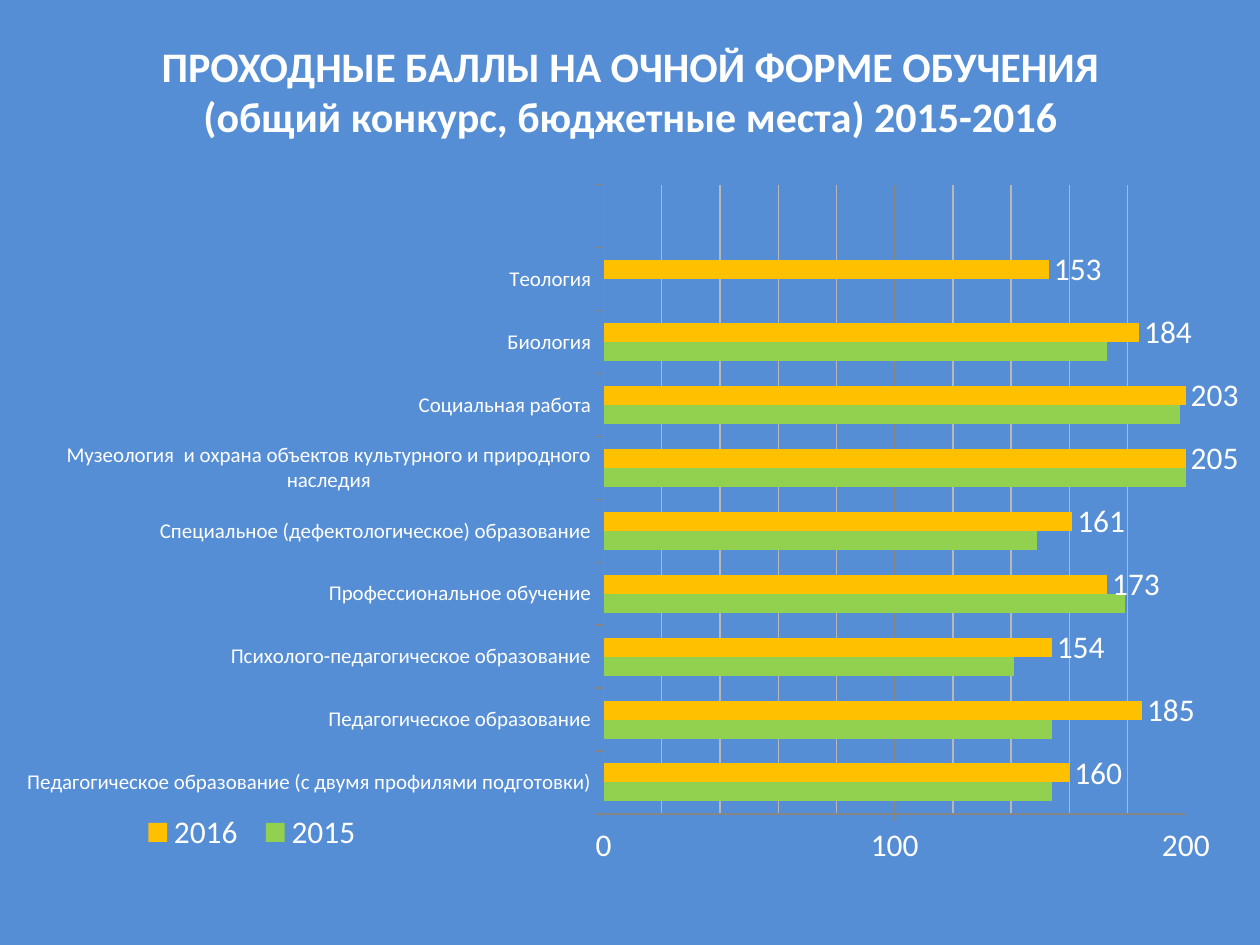
from copy import deepcopy
from dataclasses import dataclass

from lxml import etree
from pptx import Presentation
from pptx.chart.data import CategoryChartData
from pptx.dml.color import RGBColor
from pptx.enum import chart as charts, text
from pptx.oxml.ns import qn
from pptx.util import Cm, Pt


@dataclass(frozen=True)
class Theme:
    font: str = "Calibri"
    background: str = "558ED5"
    ink: str = "FFFFFF"
    axis: str = "868686"
    minor_grid: str = "B7B7B7"
    year_2015: str = "92D050"
    year_2016: str = "FFC000"
    title_size: int = 24
    chart_size: int = 18
    category_size: int = 12


TITLE = ["ПРОХОДНЫЕ БАЛЛЫ НА ОЧНОЙ ФОРМЕ ОБУЧЕНИЯ",
         "(общий конкурс, бюджетные места) 2015-2016"]

# Programme, score in 2015, score in 2016; the last slot is left free
SCORES = [
    ("Педагогическое образование (с двумя профилями подготовки)", 154, 160),
    ("Педагогическое образование", 154, 185),
    ("Психолого-педагогическое образование", 141, 154),
    ("Профессиональное обучение", 179, 173),
    ("Специальное (дефектологическое) образование", 149, 161),
    ("Музеология  и охрана объектов культурного и природного наследия", 200, 205),
    ("Социальная работа", 198, 203),
    ("Биология", 173, 184),
    ("Теология", None, 153),
    ("", None, None),
]


class SlideBuilder:
    def __init__(self, page, theme):
        self.page = page
        self.theme = theme
        fill = page.background.fill
        fill.solid()
        fill.fore_color.rgb = RGBColor.from_string(theme.background)

    def style_font(self, font, size, bold=False):
        font.name = self.theme.font
        font.size = Pt(size)
        font.bold = bold
        font.color.rgb = RGBColor.from_string(self.theme.ink)

    def style_line(self, line, color):
        line.color.rgb = RGBColor.from_string(color)
        line.width = Pt(0.75)

    def title(self, lines, left, top, width, height):
        box = self.page.shapes.add_textbox(Cm(left), Cm(top), Cm(width), Cm(height))
        frame = box.text_frame
        frame.word_wrap = True
        frame.vertical_anchor = text.MSO_ANCHOR.MIDDLE
        for index, line in enumerate(lines):
            para = frame.add_paragraph() if index else frame.paragraphs[0]
            para.alignment = text.PP_ALIGN.CENTER
            span = para.add_run()
            span.text = line
            self.style_font(span.font, self.theme.title_size, bold=True)

    def place(self, part, before, x, y, w, h, inner=False):
        """Give a chart part a fixed place, as fractions of the chart."""
        for old in part.findall(qn("c:layout")):
            part.remove(old)
        layout = etree.Element(qn("c:layout"))
        manual = etree.SubElement(layout, qn("c:manualLayout"))
        settings = [("layoutTarget", "inner")] if inner else []
        settings += [("xMode", "edge"), ("yMode", "edge"),
                     ("x", x), ("y", y), ("w", w), ("h", h)]
        for name, value in settings:
            etree.SubElement(manual, qn(f"c:{name}")).set("val", str(value))
        part.find(qn(before)).addprevious(layout)

    def style_gridlines(self, axis, area):
        axis.has_major_gridlines = axis.has_minor_gridlines = True
        self.style_line(axis.major_gridlines.format.line, self.theme.axis)
        major = area.find(".//" + qn("c:majorGridlines"))
        minor = area.find(".//" + qn("c:minorGridlines"))
        minor.append(deepcopy(major.find(qn("c:spPr"))))
        minor.find(".//" + qn("a:srgbClr")).set("val", self.theme.minor_grid)

    def bar_chart(self, rows, left, top, width, height):
        theme = self.theme
        programmes, scores_2015, scores_2016 = zip(*rows)
        data = CategoryChartData()
        data.categories = programmes
        data.add_series("2015", scores_2015)
        data.add_series("2016", scores_2016)
        chart = self.page.shapes.add_chart(
            charts.XL_CHART_TYPE.BAR_CLUSTERED,
            Cm(left), Cm(top), Cm(width), Cm(height), data).chart
        chart.has_title = False
        self.style_font(chart.font, theme.chart_size)

        plot = chart.plots[0]
        plot.gap_width = 131
        plot.overlap = 0
        plot.vary_by_categories = False
        for series, color in zip(plot.series, (theme.year_2015, theme.year_2016)):
            series.format.fill.solid()
            series.format.fill.fore_color.rgb = RGBColor.from_string(color)
        labels = plot.series[1].data_labels
        labels.show_value = True
        labels.position = charts.XL_LABEL_POSITION.OUTSIDE_END
        self.style_font(labels.font, theme.chart_size)

        for axis, size in ((chart.category_axis, theme.category_size),
                           (chart.value_axis, theme.chart_size)):
            axis.major_tick_mark = charts.XL_TICK_MARK.OUTSIDE
            axis.minor_tick_mark = charts.XL_TICK_MARK.NONE
            self.style_font(axis.tick_labels.font, size)
            self.style_line(axis.format.line, theme.axis)

        area = chart.element.find(".//" + qn("c:plotArea"))
        scale = chart.value_axis
        scale.minimum_scale, scale.maximum_scale = 0, 200
        scale.major_unit, scale.minor_unit = 100, 20
        self.style_gridlines(scale, area)

        chart.has_legend = True
        legend = chart.legend
        legend.position = charts.XL_LEGEND_POSITION.BOTTOM
        legend.include_in_layout = False
        self.style_font(legend.font, theme.chart_size)
        self.place(area, "c:barChart", 0.48, 0.24, 0.48, 0.69, inner=True)
        self.place(chart.element.find(".//" + qn("c:legend")), "c:overlay",
                   0.09, 0.92, 0.2, 0.06)


def main():
    deck = Presentation()
    deck.slide_width, deck.slide_height = Cm(25.4), Cm(19.05)
    builder = SlideBuilder(deck.slides.add_slide(deck.slide_layouts[6]), Theme())
    builder.bar_chart(SCORES, 0.43, -0.69, 24.54, 18.39)
    builder.title(TITLE, 1.04, 0.58, 23.34, 2.5)
    deck.save("out.pptx")


if __name__ == "__main__":
    main()
